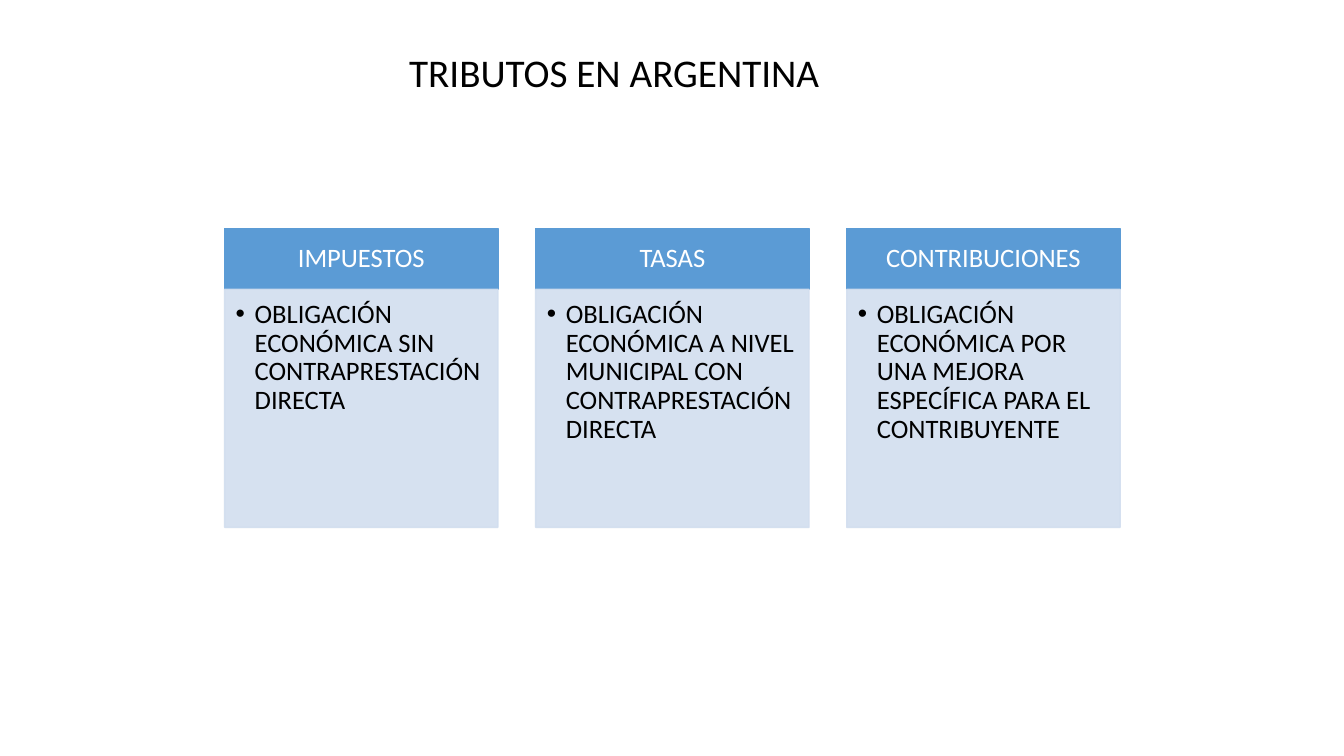
from lxml.etree import SubElement
from pptx import Presentation
from pptx.dml.color import RGBColor
from pptx.enum.shapes import MSO_SHAPE
from pptx.enum.text import MSO_ANCHOR, MSO_AUTO_SIZE, PP_ALIGN
from pptx.oxml.ns import qn
from pptx.util import Cm, Pt

TITLE = "TRIBUTOS EN ARGENTINA"
TAXES = [
    ("IMPUESTOS", "OBLIGACIÓN ECONÓMICA SIN CONTRAPRESTACIÓN DIRECTA"),
    ("TASAS", "OBLIGACIÓN ECONÓMICA A NIVEL MUNICIPAL CON CONTRAPRESTACIÓN DIRECTA"),
    ("CONTRIBUCIONES", "OBLIGACIÓN ECONÓMICA POR UNA MEJORA ESPECÍFICA PARA EL CONTRIBUYENTE"),
]

BLACK = RGBColor(0x00, 0x00, 0x00)
WHITE = RGBColor(0xFF, 0xFF, 0xFF)
BLUE = RGBColor(0x5B, 0x9B, 0xD5)
PALE_BLUE = RGBColor(0xD2, 0xDE, 0xEF)

FONT = "Calibri"
LEFT, TOP, PITCH = 5.66, 5.76, 7.84
WIDTH, HEAD_HEIGHT, BODY_HEIGHT = 6.89, 1.53, 6.0
BULLET_INDENT = Cm(0.48)


def write(sp, text, size, color, align, anchor, margins):
    tf = sp.text_frame
    frame_format = {"word_wrap": True, "auto_size": MSO_AUTO_SIZE.NONE,
                    "vertical_anchor": anchor}
    sides = ("margin_left", "margin_top", "margin_right", "margin_bottom")
    frame_format.update(zip(sides, map(Cm, margins)))
    for name, value in frame_format.items():
        setattr(tf, name, value)
    p = tf.paragraphs[0]
    p.alignment = align
    r = p.add_run()
    r.text = text
    for name, value in {"name": FONT, "size": Pt(size)}.items():
        setattr(r.font, name, value)
    r.font.color.rgb = color
    return p


def add_box(slide, left, top, height, color):
    sp = slide.shapes.add_shape(MSO_SHAPE.RECTANGLE, Cm(left), Cm(top), Cm(WIDTH), Cm(height))
    sp.shadow.inherit = False
    sp.fill.solid()
    sp.fill.fore_color.rgb = color
    sp.line.color.rgb = color
    sp.line.width = Pt(1)
    return sp


def make_translucent(sp, percent):
    """Set the opacity of both the fill and the outline."""
    for color in sp._element.spPr.iter(qn("a:srgbClr")):
        SubElement(color, qn("a:alpha"), val=str(percent * 1000))


def add_bullet(p):
    pPr = p._p.get_or_add_pPr()
    pPr.set("marL", str(BULLET_INDENT))
    pPr.set("indent", str(-BULLET_INDENT))
    SubElement(pPr, qn("a:buFont"), typeface="Arial")
    SubElement(pPr, qn("a:buChar"), char="•")


def main():
    prs = Presentation()
    prs.slide_width, prs.slide_height = Cm(33.87), Cm(19.05)
    slide = prs.slides.add_slide(prs.slide_layouts[5])

    title = slide.shapes.title
    place = {"left": 10.06, "top": 1.09, "width": 12.12, "height": 1.45}
    for name, value in place.items():
        setattr(title, name, Cm(value))
    write(title, TITLE, 28, BLACK, PP_ALIGN.LEFT, MSO_ANCHOR.TOP, (0.25, 0.13, 0.25, 0.13))

    for i, (name, definition) in enumerate(TAXES):
        left = LEFT + i * PITCH
        head = add_box(slide, left, TOP, HEAD_HEIGHT, BLUE)
        p = write(head, name, 19, WHITE, PP_ALIGN.CENTER, MSO_ANCHOR.MIDDLE,
                  (0.38, 0.2, 0.38, 0.2))
        p.line_spacing = 0.9

        body = add_box(slide, left, TOP + HEAD_HEIGHT, BODY_HEIGHT, PALE_BLUE)
        make_translucent(body, 90)
        p = write(body, definition, 19, BLACK, PP_ALIGN.LEFT, MSO_ANCHOR.TOP,
                  (0.28, 0.28, 0.36, 0.43))
        p.line_spacing = 0.9
        add_bullet(p)

    prs.save("out.pptx")


if __name__ == "__main__":
    main()
